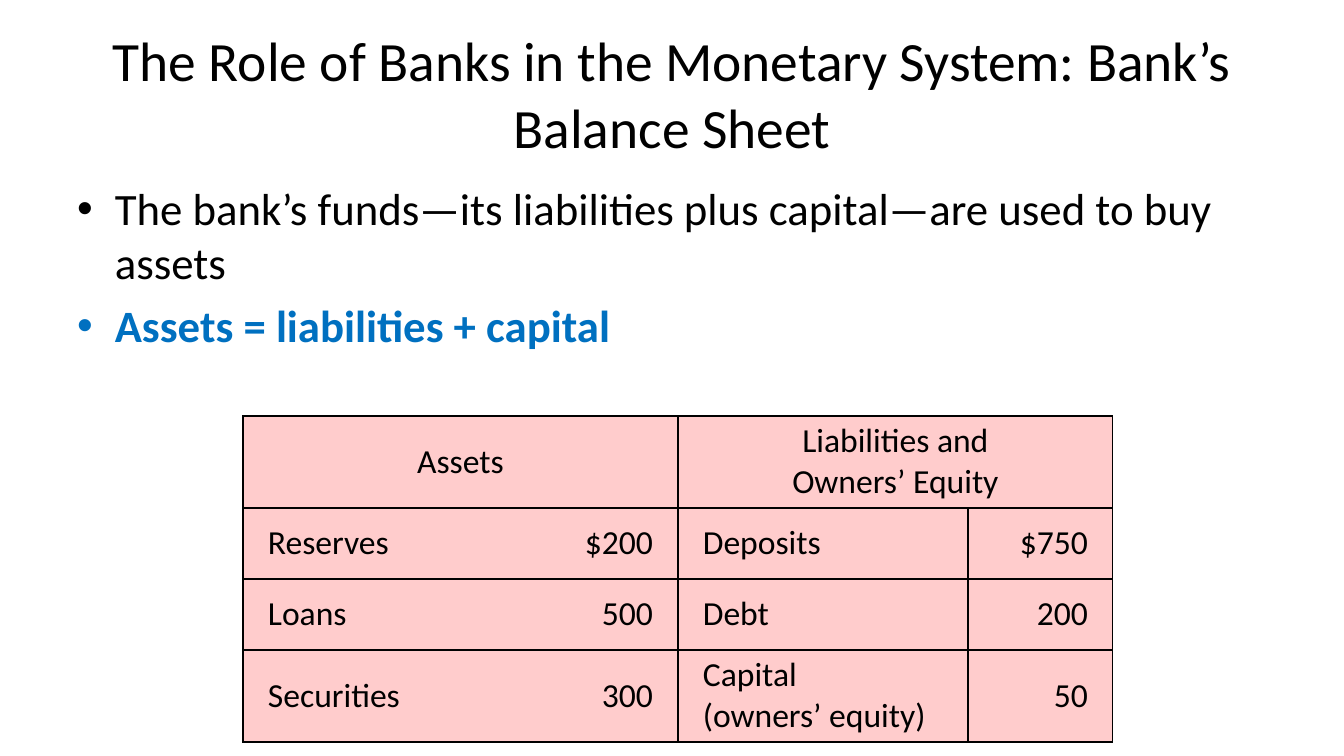
from lxml import etree
from pptx import Presentation
from pptx.dml.color import RGBColor
from pptx.enum.text import MSO_ANCHOR, MSO_AUTO_SIZE, PP_ALIGN
from pptx.oxml.ns import qn
from pptx.util import Pt

EMU_PER_PX = 914400 / 100.8
MIDDLE, TOP = MSO_ANCHOR.MIDDLE, MSO_ANCHOR.TOP
LEFT, CENTER, RIGHT = PP_ALIGN.LEFT, PP_ALIGN.CENTER, PP_ALIGN.RIGHT
NO_AUTOFIT = MSO_AUTO_SIZE.NONE

FONT = "Calibri"
COLORS = {"text": "000000", "accent": "0070C0", "cell": "FFCCCC", "border": "000000"}
PLAIN_TABLE_STYLE = "{2D5ABB26-0587-4C30-8999-92F81FD0307C}"

TITLE = "The Role of Banks in the Monetary System: Bank’s Balance Sheet"
BULLETS = [
    ("The bank’s funds—its liabilities plus capital—are used to buy assets", "text", False),
    ("Assets = liabilities + capital", "accent", True),
]
HEADINGS = ["Assets", "Liabilities and\vOwners’ Equity"]
ENTRIES = [
    ["Reserves", "$200", "Deposits", "$750"],
    ["Loans", "500", "Debt", "200"],
    ["Securities", "300", "Capital\v(owners’ equity)", "50"],
]
COLUMN_WIDTHS = [284, 151, 290, 145]
ROW_HEIGHTS = [91, 71, 71, 91]


def px(length):
    return round(length * EMU_PER_PX)


def color(name):
    return RGBColor.from_string(COLORS[name])


def apply(target, values):
    for name, value in values.items():
        setattr(target, name, value)


def format_para(para, size, align, color_name="text", bold=False):
    para.alignment = align
    for span in para.runs:
        apply(span.font, {"name": FONT, "size": Pt(size), "bold": bold})
        span.font.color.rgb = color(color_name)


def place(box, left, top, width, height, anchor):
    apply(box, {"left": px(left), "top": px(top), "width": px(width), "height": px(height)})
    apply(box.text_frame, {"auto_size": NO_AUTOFIT, "word_wrap": True, "vertical_anchor": anchor})


def fill_title(box):
    place(box, 67, 30, 1210, 126, MIDDLE)
    box.text_frame.text = TITLE
    format_para(box.text_frame.paragraphs[0], 39.6, CENTER)


def fill_bullets(box):
    place(box, 67, 176, 1210, 499, TOP)
    box.text_frame.text = "\n".join(text for text, _, _ in BULLETS)
    for para, (_, color_name, bold) in zip(box.text_frame.paragraphs, BULLETS):
        format_para(para, 32, LEFT, color_name, bold)


def set_borders(cell, sides):
    """Draw 1 pt lines on the sides, named by letters in the order LRTB."""
    properties = cell._tc.get_or_add_tcPr()
    for side in sides:
        line = etree.SubElement(properties, qn(f"a:ln{side}"), w=str(Pt(1)))
        solid = etree.SubElement(line, qn("a:solidFill"))
        etree.SubElement(solid, qn("a:srgbClr"), val=COLORS["border"])


def fill_cell(cell, text, align, inset, sides):
    apply(cell, {
        "text": text,
        "vertical_anchor": MIDDLE,
        "margin_left": px(inset),
        "margin_right": px(inset),
        "margin_top": px(5),
        "margin_bottom": px(5),
    })
    set_borders(cell, sides)
    cell.fill.solid()
    cell.fill.fore_color.rgb = color("cell")
    for para in cell.text_frame.paragraphs:
        format_para(para, 24, align)


def add_balance_sheet(page):
    frame = page.shapes.add_table(
        len(ROW_HEIGHTS), len(COLUMN_WIDTHS), px(243), px(416),
        px(sum(COLUMN_WIDTHS)), px(sum(ROW_HEIGHTS)))
    table = frame.table
    apply(table, {"first_row": False, "horz_banding": False})
    table._tbl.tblPr.find(qn("a:tableStyleId")).text = PLAIN_TABLE_STYLE
    for column, width in zip(table.columns, COLUMN_WIDTHS):
        column.width = px(width)
    for row, height in zip(table.rows, ROW_HEIGHTS):
        row.height = px(height)

    for index, heading in enumerate(HEADINGS):
        first, last = table.cell(0, 2 * index), table.cell(0, 2 * index + 1)
        first.merge(last)
        fill_cell(first, heading, CENTER, 10, "LRTB")
        set_borders(last, "RTB")
    for row_index, entries in enumerate(ENTRIES, start=1):
        for column_index, text in enumerate(entries):
            is_amount = column_index % 2 == 1
            align, sides = (RIGHT, "RTB") if is_amount else (LEFT, "LTB")
            fill_cell(table.cell(row_index, column_index), text, align, 25, sides)


def main():
    deck = Presentation()
    apply(deck, {"slide_width": px(1344), "slide_height": px(756)})
    page = deck.slides.add_slide(deck.slide_layouts[1])
    fill_title(page.shapes.title)
    fill_bullets(page.placeholders[1])
    add_balance_sheet(page)
    deck.save("out.pptx")


if __name__ == "__main__":
    main()
